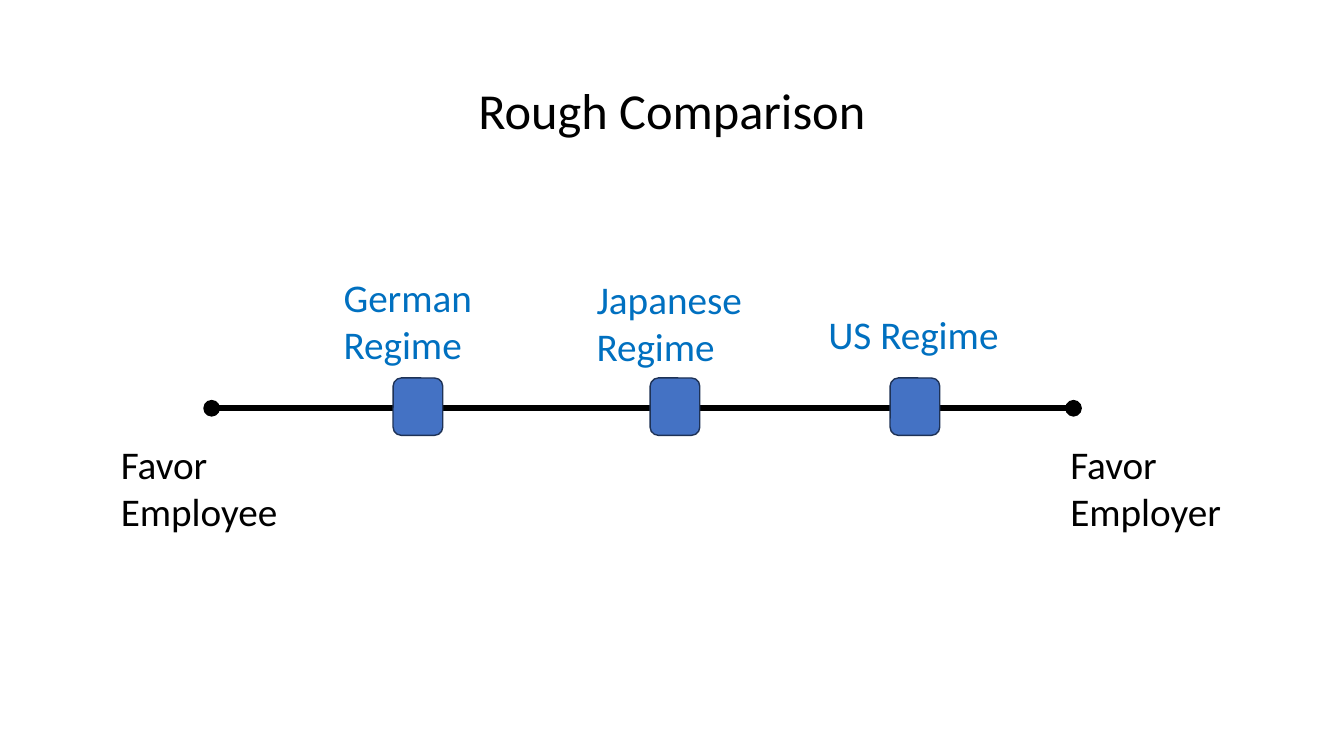
"""Build a slide that places three employment regimes on a spectrum."""
from dataclasses import dataclass

from lxml import etree
from pptx import Presentation
from pptx.dml.color import RGBColor
from pptx.enum.shapes import MSO_CONNECTOR, MSO_SHAPE
from pptx.enum.text import MSO_ANCHOR, MSO_AUTO_SIZE, PP_ALIGN
from pptx.oxml.ns import qn
from pptx.slide import Slide
from pptx.util import Pt

STRAIGHT = MSO_CONNECTOR.STRAIGHT
ROUNDED = MSO_SHAPE.ROUNDED_RECTANGLE
MIDDLE = MSO_ANCHOR.MIDDLE
FIT_SHAPE = MSO_AUTO_SIZE.SHAPE_TO_FIT_TEXT
CENTER = PP_ALIGN.CENTER

BLACK = RGBColor(0x00, 0x00, 0x00)
LABEL_BLUE = RGBColor(0x00, 0x70, 0xC0)
MARKER_BLUE = RGBColor(0x44, 0x72, 0xC4)
MARKER_EDGE = RGBColor(0x1E, 0x32, 0x56)

FONT = "Calibri"
AXIS_LEFT, AXIS_RIGHT, AXIS_Y = 151.2, 766.8, 291.6
MARKER_TOP, MARKER_WIDTH, MARKER_HEIGHT = 270, 35.5, 41
LINE_HEIGHT, LABEL_PADDING = 34, 7


@dataclass(frozen=True)
class Label:
    text: str
    left: float
    top: float
    width: float
    color: RGBColor


LABELS = [
    Label("Favor\nEmployer", 757.4, 311, 123, BLACK),
    Label("Favor\nEmployee", 79.2, 311, 127.4, BLACK),
    Label("US Regime", 584.6, 218.2, 137.5, LABEL_BLUE),
    Label("Japanese\nRegime", 419, 193, 126, LABEL_BLUE),
    Label("German\nRegime", 238.3, 191.5, 113.8, LABEL_BLUE),
]
MARKER_LEFTS = [635.8, 464.4, 280.8]


def add_title(page: Slide, text: str) -> None:
    box = page.shapes.add_textbox(Pt(66), Pt(28.8), Pt(828), Pt(104.4))
    frame = box.text_frame
    frame.word_wrap = True
    frame.vertical_anchor = MIDDLE
    frame.text = text
    para = frame.paragraphs[0]
    para.alignment = CENTER
    para.line_spacing = 0.9
    font = para.runs[0].font
    font.name, font.size = FONT, Pt(36)
    font.color.rgb = BLACK


def add_axis(page: Slide) -> None:
    axis = page.shapes.add_connector(
        STRAIGHT, Pt(AXIS_LEFT), Pt(AXIS_Y), Pt(AXIS_RIGHT), Pt(AXIS_Y)
    )
    axis.line.color.rgb = BLACK
    axis.line.width = Pt(4)
    properties = axis.element.spPr
    outline = properties.find(qn("a:ln"))
    for end in ("a:headEnd", "a:tailEnd"):
        etree.SubElement(outline, qn(end), type="oval")
    etree.SubElement(properties, qn("a:effectLst"))


def add_marker(page: Slide, left: float) -> None:
    marker = page.shapes.add_shape(
        ROUNDED, Pt(left), Pt(MARKER_TOP), Pt(MARKER_WIDTH), Pt(MARKER_HEIGHT)
    )
    marker.shadow.inherit = False
    marker.fill.solid()
    marker.fill.fore_color.rgb = MARKER_BLUE
    marker.line.color.rgb = MARKER_EDGE
    marker.line.width = Pt(1)


def add_label(page: Slide, label: Label) -> None:
    height = LABEL_PADDING + LINE_HEIGHT * len(label.text.split("\n"))
    box = page.shapes.add_textbox(
        Pt(label.left), Pt(label.top), Pt(label.width), Pt(height)
    )
    frame = box.text_frame
    frame.word_wrap = False
    frame.auto_size = FIT_SHAPE
    frame.text = label.text
    for para in frame.paragraphs:
        for span in para.runs:
            span.font.name, span.font.size = FONT, Pt(28)
            span.font.color.rgb = label.color


def main() -> None:
    deck = Presentation()
    deck.slide_width, deck.slide_height = Pt(960), Pt(540)
    page = deck.slides.add_slide(deck.slide_layouts[6])
    add_title(page, "Rough Comparison")
    add_axis(page)
    for left in MARKER_LEFTS:
        add_marker(page, left)
    for label in LABELS:
        add_label(page, label)
    deck.save("out.pptx")


if __name__ == "__main__":
    main()
